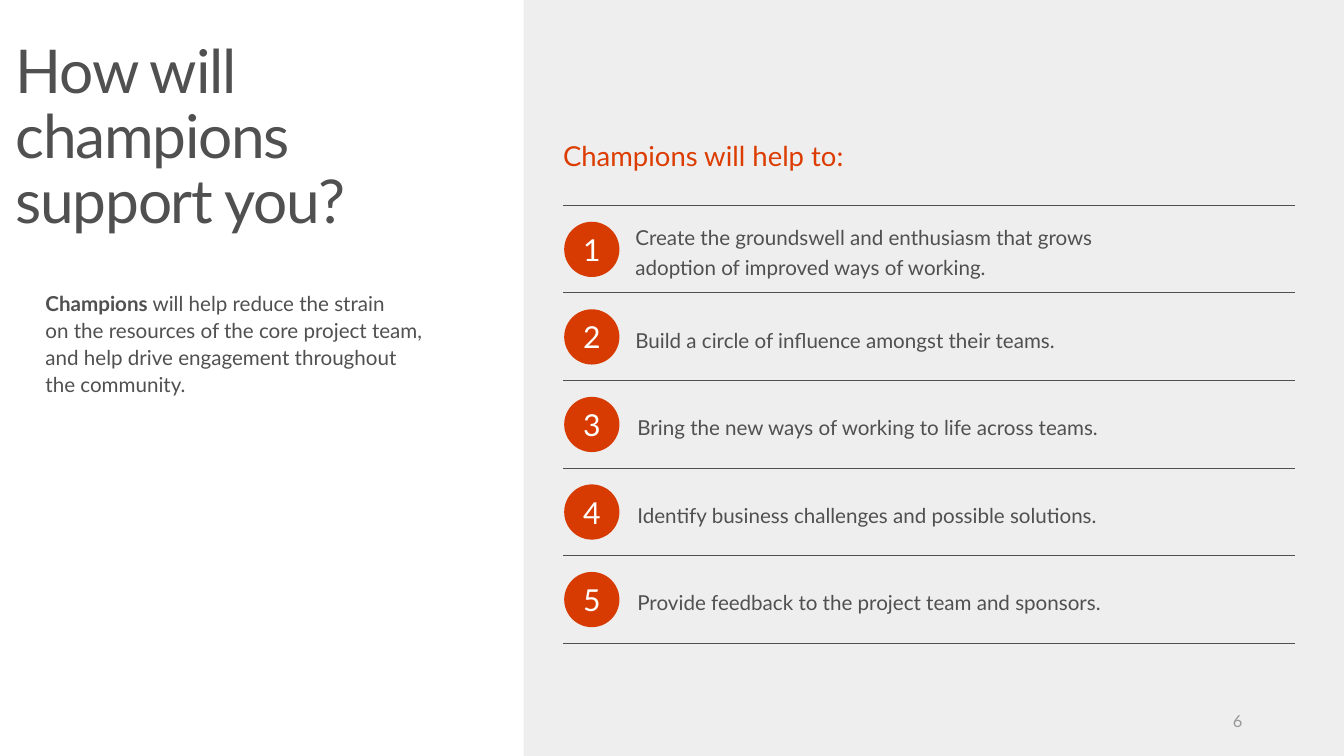
from lxml import etree
from pptx import Presentation
from pptx import util as u
from pptx.dml.color import RGBColor
from pptx.enum import shapes, text
from pptx.oxml.ns import qn

FONT = "Lato"
HUES = {
    "panel": "EEEEEE",
    "ink": "505050",
    "head": "DC3C00",
    "disc": "D83B01",
    "white": "FFFFFF",
    "page": "989898",
}
TASKS = [
    # text left, text width, wording
    (16.08, 13.61, "Create the groundswell and enthusiasm that grows adoption of improved ways of working."),
    (16.08, 13.18, "Build a circle of influence amongst their teams."),
    (16.13, 15.24, "Bring the new ways of working to life across teams."),
    (16.13, 14.58, "Identify business challenges and possible solutions."),
    (16.13, 14.22, "Provide feedback to the project team and sponsors."),
]
TOP, PITCH = 5.28, 2.25


def hue(name):
    return RGBColor.from_string(HUES[name])


def style(para, size, color, spacing=1.0, after=0):
    para.font.name = FONT
    para.font.size = u.Pt(size)
    para.font.color.rgb = hue(color)
    para.line_spacing = spacing
    para.space_after = u.Pt(after)


def add_text(slide, box, words, size, color, spacing=1.0, after=0, inset=(0.25, 0.13), middle=False):
    """Add a wrapped text box and return its paragraph."""
    frame = slide.shapes.add_textbox(*map(u.Cm, box)).text_frame
    frame.word_wrap = True
    frame.margin_left = frame.margin_right = u.Cm(inset[0])
    frame.margin_top = frame.margin_bottom = u.Cm(inset[1])
    if middle:
        frame.vertical_anchor = text.MSO_ANCHOR.MIDDLE
    para = frame.paragraphs[0]
    para.text = words
    style(para, size, color, spacing, after)
    return para


def add_shape(slide, kind, box, color):
    shape = slide.shapes.add_shape(kind, *map(u.Cm, box))
    shape.shadow.inherit = False
    shape.fill.solid()
    shape.fill.fore_color.rgb = hue(color)
    shape.line.fill.background()
    return shape


def add_disc(slide, top, label):
    disc = add_shape(slide, shapes.MSO_SHAPE.OVAL, (14.5, top, 1.42, 1.42), "disc")
    frame = disc.text_frame
    frame.margin_left = frame.margin_right = u.Cm(0.13)
    frame.vertical_anchor = text.MSO_ANCHOR.MIDDLE
    para = frame.paragraphs[0]
    para.text = label
    para.alignment = text.PP_ALIGN.CENTER
    style(para, 22, "white")


def add_rule(slide, top):
    rule = slide.shapes.add_connector(
        shapes.MSO_CONNECTOR.STRAIGHT, u.Cm(14.48), u.Cm(top), u.Cm(33.27), u.Cm(top))
    rule.line.color.rgb = hue("ink")
    rule.line.width = u.Pt(0.75)
    etree.SubElement(rule._element.spPr, qn("a:effectLst"))


def add_intro(slide):
    wide = (0.41, 0.25)
    title = add_text(slide, (0, 0.81, 11.48, 2.13), "How will champions support you?",
                     44, "ink", 0.9, inset=wide)
    title.runs[0]._r.get_or_add_rPr().set("spc", "-100")
    body = add_text(slide, (0.76, 7.16, 11.43, 4.14), "Champions", 15, "ink", 1.1, 3.4, wide)
    body.runs[0].font.bold = True
    body.add_run().text = " will help reduce the strain"
    for line in ("on the resources of the core project team, and help drive engagement throughout",
                 "the community."):
        body.add_line_break()
        body.add_run().text = line


def add_tasks(slide):
    add_text(slide, (14.22, 3.33, 16.81, 1.22), "Champions will help to:", 20, "head", 1.14, 3.1)
    add_rule(slide, TOP)
    for num, (left, width, words) in enumerate(TASKS):
        top = TOP + num * PITCH
        add_text(slide, (left, top + 0.24, width, 1.8), words, 15, "ink", 1.2, 3.1, middle=True)
        add_disc(slide, top + 0.42, str(num + 1))
        add_rule(slide, top + PITCH)


def main():
    deck = Presentation()
    deck.slide_width, deck.slide_height = u.Cm(34.54), u.Cm(19.43)
    slide = deck.slides.add_slide(deck.slide_layouts[6])
    add_shape(slide, shapes.MSO_SHAPE.RECTANGLE, (13.46, 0, 21.08, 19.43), "panel")
    add_intro(slide)
    add_tasks(slide)
    page = add_text(slide, (24.41, 18.01, 7.77, 1.04), "6", 12, "page", middle=True)
    page.alignment = text.PP_ALIGN.RIGHT
    deck.save("out.pptx")


if __name__ == "__main__":
    main()
